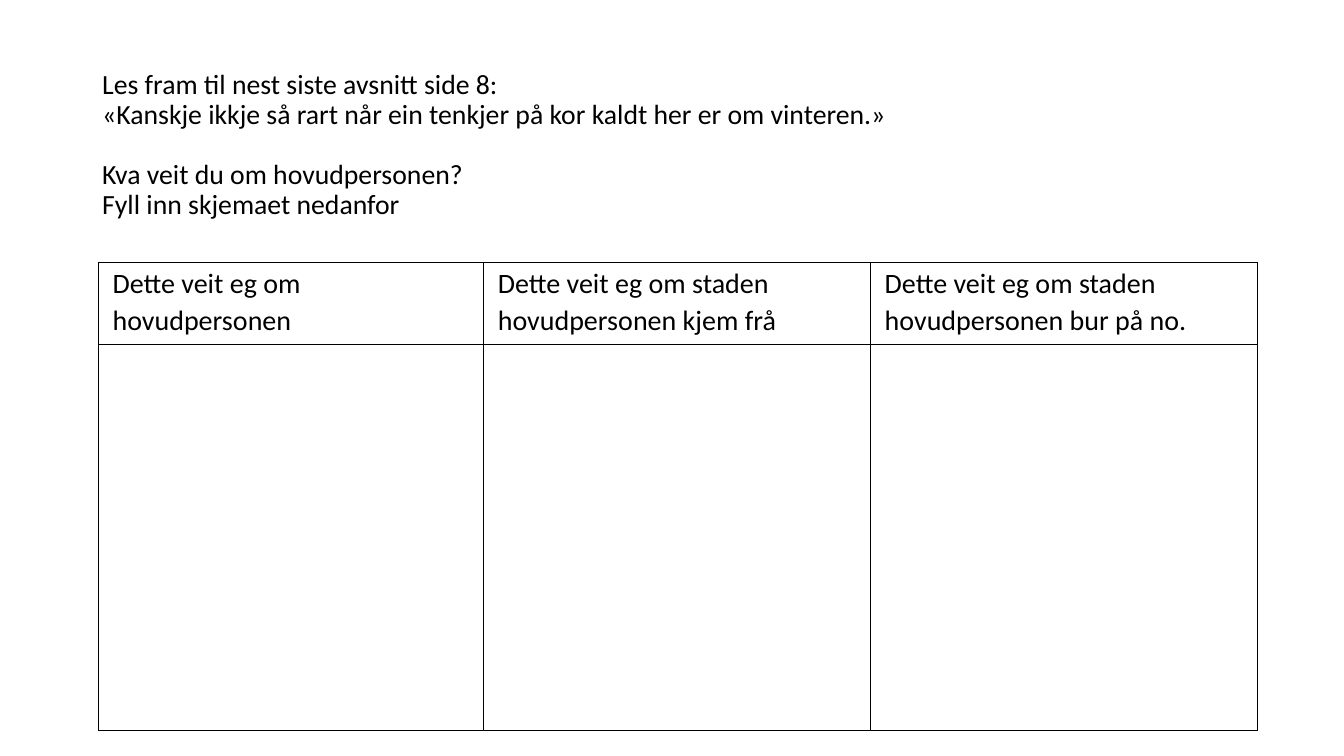
from pptx import Presentation
from pptx.dml.color import RGBColor
from pptx.enum.text import MSO_ANCHOR as ANCHOR, MSO_AUTO_SIZE as FIT, PP_ALIGN as ALIGN
from pptx.oxml.xmlchemy import OxmlElement as Element
from pptx.util import Pt

BLACK = RGBColor(0, 0, 0)

INTRO = [
    "Les fram til nest siste avsnitt side 8: \v"
    "«Kanskje ikkje så rart når ein tenkjer på kor kaldt her er om vinteren.»",
    "Kva veit du om hovudpersonen?\vFyll inn skjemaet nedanfor",
]
HEADERS = [
    "Dette veit eg om hovudpersonen",
    "Dette veit eg om staden hovudpersonen kjem frå",
    "Dette veit eg om staden hovudpersonen bur på no.",
]


def apply(target, values):
    for name, value in values.items():
        setattr(target, name, value)


class SlideBuilder:
    font = "Calibri"
    color = BLACK
    border = Pt(1)

    def __init__(self, prs):
        self.slide = prs.slides.add_slide(prs.slide_layouts[5])

    def format_paragraph(self, p, size, values):
        apply(p, values)
        for r in p.runs:
            apply(r.font, {"name": self.font, "size": Pt(size), "bold": False})
            r.font.color.rgb = self.color

    def title(self, paragraphs, box, size, gap):
        sp = self.slide.shapes.title
        apply(sp, dict(zip(("left", "top", "width", "height"), map(Pt, box))))
        tf = sp.text_frame
        apply(tf, {"word_wrap": True, "auto_size": FIT.NONE,
                   "vertical_anchor": ANCHOR.MIDDLE})
        tf.text = "\n".join(paragraphs)
        for i, p in enumerate(tf.paragraphs):
            self.format_paragraph(p, size, {
                "alignment": ALIGN.LEFT, "line_spacing": 0.9,
                "space_before": Pt(gap if i else 0)})

    def outline(self, cell):
        tc_pr = cell._tc.get_or_add_tcPr()
        for side in ("L", "R", "T", "B"):
            ln = Element(f"a:ln{side}")
            ln.set("w", str(self.border))
            fill = Element("a:solidFill")
            clr = Element("a:srgbClr")
            clr.set("val", str(self.color))
            fill.append(clr)
            ln.append(fill)
            tc_pr.append(ln)

    def table(self, headers, left, top, widths, heights, size):
        frame = self.slide.shapes.add_table(
            len(heights), len(widths), Pt(left), Pt(top),
            Pt(sum(widths)), Pt(sum(heights)))
        table = frame.table
        apply(table, {"first_row": False, "horz_banding": False})
        for column, width in zip(table.columns, widths):
            column.width = Pt(width)
        for row, height in zip(table.rows, heights):
            row.height = Pt(height)
        for cell in table.iter_cells():
            apply(cell, {"margin_left": Pt(10), "margin_right": Pt(10),
                         "margin_top": Pt(1.4), "margin_bottom": Pt(0)})
            self.outline(cell)
            cell.fill.background()
        for cell, text in zip(table.rows[0].cells, headers):
            cell.text = text
            self.format_paragraph(cell.text_frame.paragraphs[0], size, {
                "line_spacing": 1.07, "space_after": Pt(8)})


def main():
    prs = Presentation()
    apply(prs, {"slide_width": Pt(960), "slide_height": Pt(540)})
    s = SlideBuilder(prs)
    s.title(INTRO, (65.8, 45.4, 828, 116.6), size=19.8, gap=21.4)
    s.table(HEADERS, 70.4, 187.6, (275.2, 276.4, 276.4), (58.4, 275.6), size=20)
    prs.save("out.pptx")


if __name__ == "__main__":
    main()
